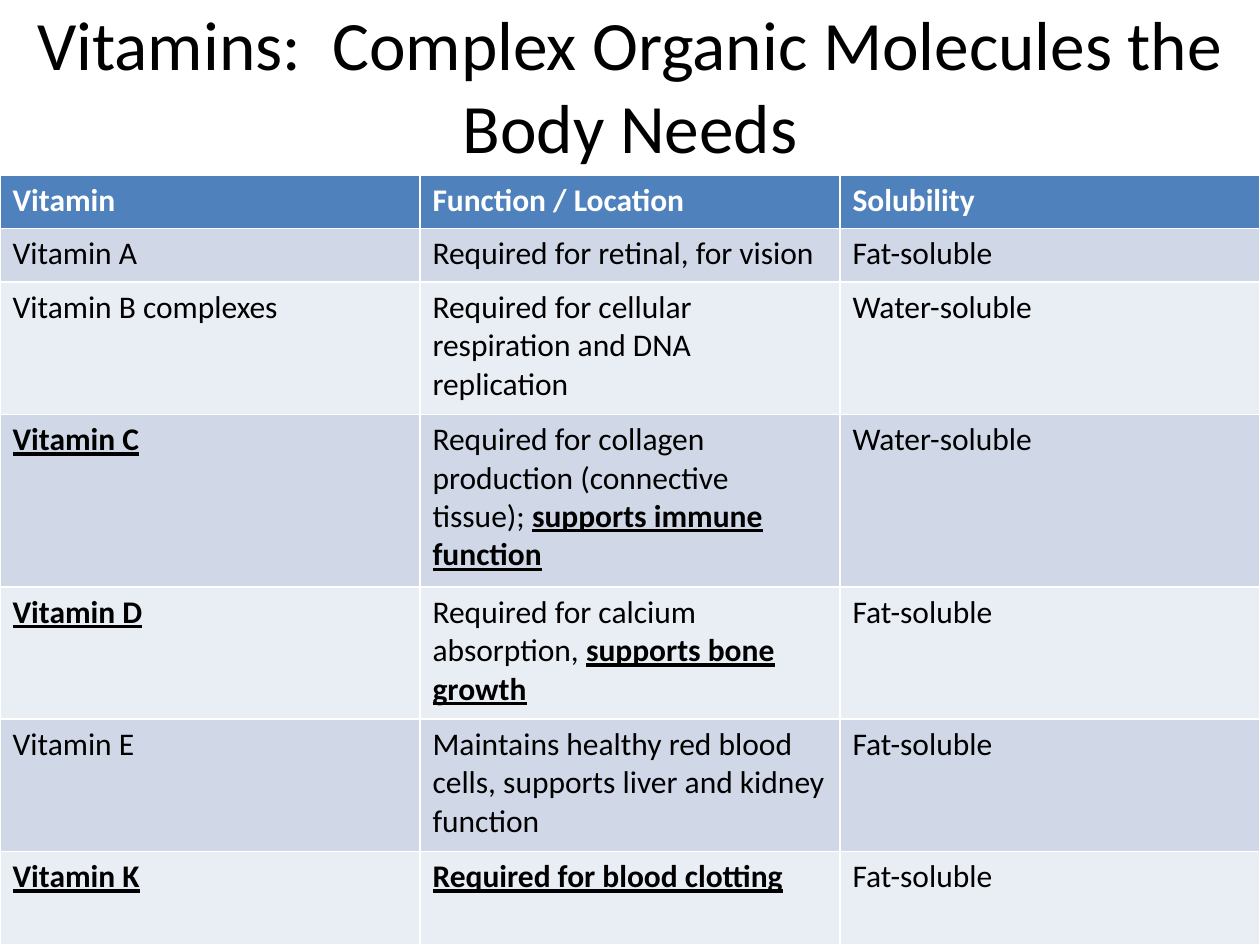
"""Build a slide with a table of vitamins, their functions and solubility."""
from pptx import Presentation
from pptx.dml.color import RGBColor
from pptx.enum.text import MSO_ANCHOR, PP_ALIGN
from pptx.util import Pt

COLORS = {
    "header": "4F81BD",
    "odd": "D0D8E8",
    "even": "E9EDF4",
    "header_text": "FFFFFF",
    "text": "000000",
}
FONT = "Calibri"
SLIDE_WIDTH, SLIDE_HEIGHT = 720, 540
TITLE_HEIGHT = 96
TABLE_TOP = 100
TITLE = "Vitamins:  Complex Organic Molecules the Body Needs"
HEADINGS = ["Vitamin", "Function / Location", "Solubility"]
FAT, WATER = "Fat-soluble", "Water-soluble"

# Each cell holds its plain text, then its emphasised text.
VITAMINS = [
    [("Vitamin A", ""), ("Required for retinal, for vision", ""), (FAT, "")],
    [("Vitamin B complexes", ""),
     ("Required for cellular respiration and DNA replication", ""), (WATER, "")],
    [("", "Vitamin C"),
     ("Required for collagen production (connective tissue); ",
      "supports immune function"), (WATER, "")],
    [("", "Vitamin D"),
     ("Required for calcium absorption, ", "supports bone growth"), (FAT, "")],
    [("Vitamin E", ""),
     ("Maintains healthy red blood cells, supports liver and kidney function", ""),
     (FAT, "")],
    [("", "Vitamin K"), ("", "Required for blood clotting"), (FAT, "")],
]
ROW_HEIGHTS = [30.6, 30.6, 75.6, 98.6, 75.6, 75.6, 53.4]


def style(font, size, color):
    font.name = FONT
    font.size = Pt(size)
    font.color.rgb = RGBColor.from_string(COLORS[color])


def fill_cell(cell, parts, fill, color):
    cell.fill.solid()
    cell.fill.fore_color.rgb = RGBColor.from_string(COLORS[fill])
    paragraph = cell.text_frame.paragraphs[0]
    style(paragraph.font, 18, color)
    for text, emphasised in zip(parts, (False, True)):
        if text:
            run = paragraph.add_run()
            run.text = text
            run.font.bold = emphasised or fill == "header"
            run.font.underline = emphasised


def main():
    presentation = Presentation()
    presentation.slide_width = Pt(SLIDE_WIDTH)
    presentation.slide_height = Pt(SLIDE_HEIGHT)
    slide = presentation.slides.add_slide(presentation.slide_layouts[5])

    title = slide.shapes.title
    title.left, title.top = Pt(0), Pt(0)
    title.width, title.height = Pt(SLIDE_WIDTH), Pt(TITLE_HEIGHT)
    title.text_frame.text = TITLE
    title.text_frame.word_wrap = True
    title.text_frame.vertical_anchor = MSO_ANCHOR.MIDDLE
    heading = title.text_frame.paragraphs[0]
    heading.alignment = PP_ALIGN.CENTER
    style(heading.font, 39.6, "text")

    rows = [[(name, "") for name in HEADINGS]] + VITAMINS
    table = slide.shapes.add_table(
        len(rows), len(HEADINGS), Pt(0), Pt(TABLE_TOP),
        Pt(SLIDE_WIDTH), Pt(sum(ROW_HEIGHTS))).table
    for index, (cells, height) in enumerate(zip(rows, ROW_HEIGHTS)):
        table.rows[index].height = Pt(height)
        fill = "header" if index == 0 else "odd" if index % 2 else "even"
        color = "header_text" if index == 0 else "text"
        for column, parts in enumerate(cells):
            fill_cell(table.cell(index, column), parts, fill, color)

    presentation.save("out.pptx")


if __name__ == "__main__":
    main()
